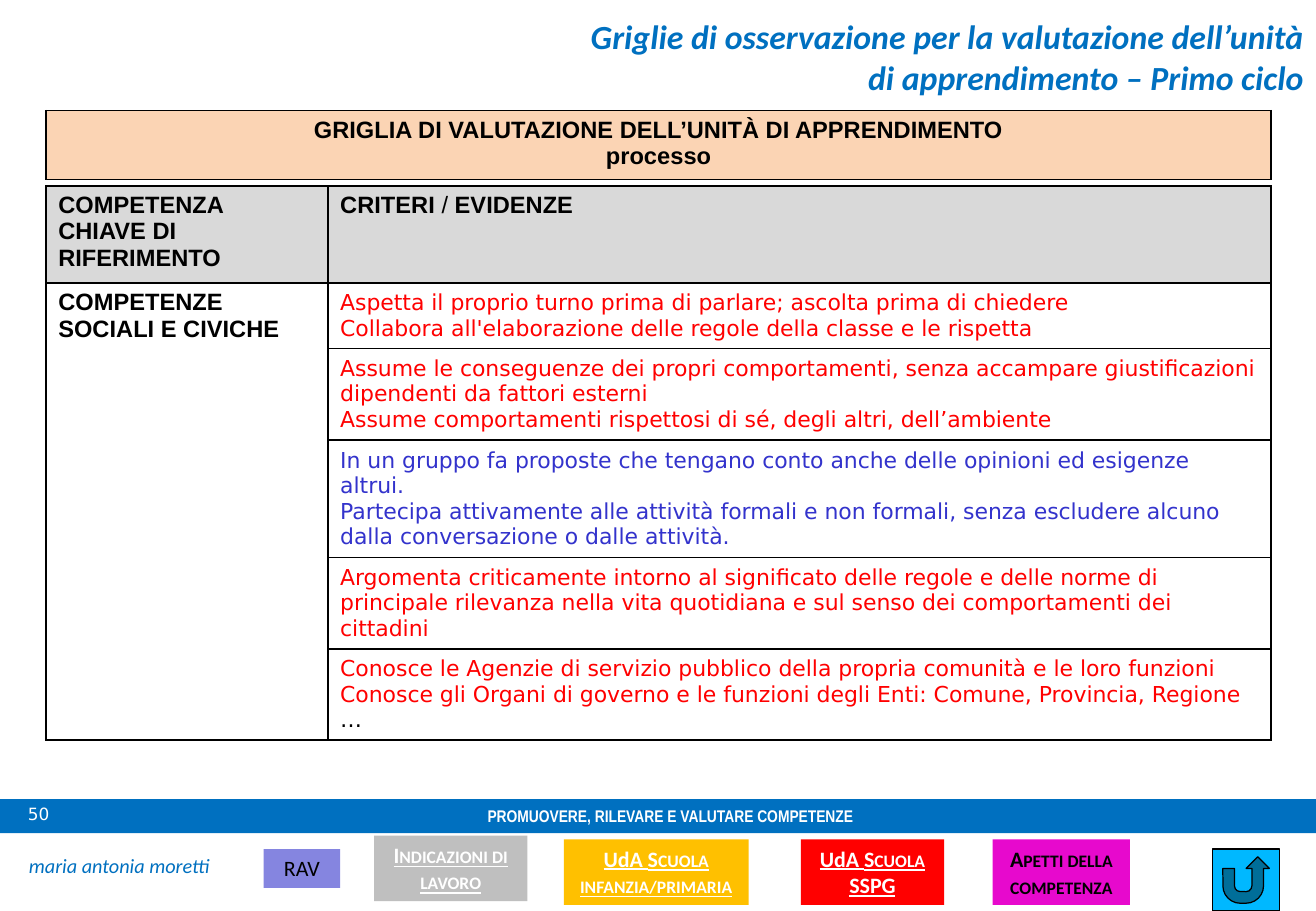
from pptx import Presentation
from pptx.dml.color import RGBColor
from pptx.enum.shapes import MSO_SHAPE
from pptx.enum.text import MSO_ANCHOR, MSO_AUTO_SIZE, PP_ALIGN
from pptx.oxml import parse_xml
from pptx.oxml.ns import nsdecls
from pptx.util import Inches, Pt

HEX = {
    "blue": "0070C0", "white": "FFFFFF", "black": "000000", "red": "FF0000",
    "navy": "3333CC", "amber": "FFC000", "silver": "BFBFBF", "pink": "E709CD",
    "lilac": "8585E0", "sky": "00B8FF", "grey": "D9D9D9", "peach": "FBD4B4",
}

HEAD = dict(size=14, font="Arial", bold=True)
ITEM = dict(size=13, font="DejaVu Sans", anchor=MSO_ANCHOR.MIDDLE)

# Height of each row, colour of its text, lines
CRITERIA = [
    (0.54, "red", [
        "Aspetta il proprio turno prima di parlare; ascolta prima di chiedere",
        "Collabora all'elaborazione delle regole della classe e le rispetta"]),
    (0.75, "red", [
        "Assume le conseguenze dei propri comportamenti, senza accampare "
        "giustificazioni dipendenti da fattori esterni",
        "Assume comportamenti rispettosi di sé, degli altri, dell’ambiente"]),
    (0.97, "navy", [
        "In un gruppo fa proposte che tengano conto anche delle opinioni ed "
        "esigenze altrui.",
        "Partecipa attivamente alle attività formali e non formali, senza "
        "escludere alcuno dalla conversazione o dalle attività."]),
    (0.75, "red", [
        "Argomenta criticamente intorno al significato delle regole e delle "
        "norme di principale rilevanza nella vita quotidiana e sul senso dei "
        "comportamenti dei cittadini"]),
    (0.75, "red", [
        "Conosce le Agenzie di servizio pubblico della propria comunità e le "
        "loro funzioni",
        "Conosce gli Organi di governo e le funzioni degli Enti: Comune, "
        "Provincia, Regione",
        [("…", dict(color="black"))]]),
]

SMALL = dict(caps=True)
LINK = dict(bold=True, under=True, color="white")
# Left, top offset, width, height, fill, text, format
BUTTONS = [
    (2.17, 0.11, 0.63, 0.32, "lilac", "RAV", {}),
    (3.08, 0, 1.26, 0.54, "silver", "Indicazioni di lavoro", LINK | SMALL),
    (4.64, 0.03, 1.52, 0.54, "amber",
     [("UdA ", {}), ("Scuola infanzia/primaria", SMALL)], LINK),
    (6.59, 0.03, 1.18, 0.54, "red",
     [("UdA ", {}), ("Scuola ", SMALL), ("SSPG", {})], LINK),
    (8.17, 0.03, 1.13, 0.54, "pink", "Apetti della competenza",
     dict(bold=True, caps=True, anchor=MSO_ANCHOR.MIDDLE)),
]


def rgb(name):
    return RGBColor.from_string(HEX[name])


def style(run, size=13, font="Calibri", color="black", bold=False,
          italic=False, under=False, caps=False):
    face = run.font
    face.size, face.name = Pt(size), font
    face.bold, face.italic, face.underline = bold, italic, under
    face.color.rgb = rgb(color)
    if caps:
        run._r.get_or_add_rPr().set("cap", "small")


def write(box, lines, align=PP_ALIGN.LEFT, anchor=MSO_ANCHOR.TOP, **look):
    """Fill a shape or cell; a line is a string or a list of (text, format)."""
    box.vertical_anchor = anchor
    frame = box if hasattr(box, "paragraphs") else box.text_frame
    for i, line in enumerate(lines):
        para = frame.paragraphs[0] if i == 0 else frame.add_paragraph()
        para.alignment = align
        for text, extra in [(line, {})] if isinstance(line, str) else line:
            run = para.add_run()
            run.text = text
            style(run, **(look | extra))


def label(slide, x, y, w, h, text, pad=(0.1, 0.05), wrap=True, **look):
    frame = slide.shapes.add_textbox(
        Inches(x), Inches(y), Inches(w), Inches(h)).text_frame
    frame.word_wrap = wrap
    frame.margin_left = frame.margin_right = Inches(pad[0])
    frame.margin_top = frame.margin_bottom = Inches(pad[1])
    write(frame, [text], **look)


def block(slide, kind, x, y, w, h, fill, line=None):
    shape = slide.shapes.add_shape(
        kind, Inches(x), Inches(y), Inches(w), Inches(h))
    shape.shadow.inherit = False
    shape.fill.solid()
    shape.fill.fore_color.rgb = rgb(fill)
    if line:
        shape.line.color.rgb = rgb(line)
        shape.line.width = Pt(0.75)
    else:
        shape.line.fill.background()
    return shape


def frame_cell(cell, fill=None):
    """Draw the four borders, then the fill."""
    props = cell._tc.get_or_add_tcPr()
    for side in "LRTB":
        props.append(parse_xml(
            f'<a:ln{side} {nsdecls("a")} w="12700"><a:solidFill>'
            f'<a:srgbClr val="{HEX["black"]}"/></a:solidFill></a:ln{side}>'))
    if fill:
        cell.fill.solid()
        cell.fill.fore_color.rgb = rgb(fill)
    else:
        cell.fill.background()


def grid(slide, x, y, cols, rows, fill):
    """Add a bordered table whose first row is filled."""
    table = slide.shapes.add_table(
        len(rows), len(cols), Inches(x), Inches(y),
        Inches(sum(cols)), Inches(sum(rows))).table
    table.first_row = table.horz_banding = False
    for col, width in zip(table.columns, cols):
        col.width = Inches(width)
    for i, (row, height) in enumerate(zip(table.rows, rows)):
        row.height = Inches(height)
        for cell in row.cells:
            frame_cell(cell, None if i else fill)
    return table


def heading(slide, x, y, w, h):
    title = slide.shapes.title
    title.left, title.top = Inches(x), Inches(y)
    title.width, title.height = Inches(w), Inches(h)
    title.text_frame.auto_size = MSO_AUTO_SIZE.NONE
    title.text_frame.word_wrap = True
    write(title.text_frame,
          ["Griglie di osservazione per la valutazione dell’unità "
           "di apprendimento – Primo ciclo"],
          align=PP_ALIGN.RIGHT, size=20, color="blue", bold=True, italic=True)


def rubric(slide, x, y, w):
    banner = grid(slide, x, y, [w], [0.57], "peach")
    write(banner.cell(0, 0),
          ["GRIGLIA DI VALUTAZIONE DELL’UNITÀ DI APPRENDIMENTO", "processo"],
          align=PP_ALIGN.CENTER, **HEAD)

    rows = [0.8] + [height for height, _, _ in CRITERIA]
    table = grid(slide, x, y + 0.62, [2.32, w - 2.32], rows, "grey")
    table.cell(1, 0).merge(table.cell(len(CRITERIA), 0))
    write(table.cell(0, 0), ["COMPETENZA CHIAVE DI RIFERIMENTO"], **HEAD)
    write(table.cell(0, 1),
          [[("CRITERI", {}), (" / ", dict(bold=False)), ("EVIDENZE", {})]],
          align=PP_ALIGN.JUSTIFY, **HEAD)
    write(table.cell(1, 0), ["COMPETENZE SOCIALI E CIVICHE"], **HEAD)
    for i, (_, color, lines) in enumerate(CRITERIA, 1):
        write(table.cell(i, 1), lines, color=color, **ITEM)


def footer(slide, y, w):
    block(slide, MSO_SHAPE.RECTANGLE, 0, y, w, 0.28, "blue")
    label(slide, 0.16, y, 0.38, 0.24, "50", pad=(0.07, 0.04), wrap=False,
          size=10, font="DejaVu Sans", color="white")
    label(slide, 0.77, y + 0.01, 9.49, 0.24,
          "PROMUOVERE, RILEVARE E VALUTARE COMPETENZE", pad=(0.07, 0.04),
          align=PP_ALIGN.CENTER, size=10, font="Arial Narrow",
          color="white", bold=True)
    label(slide, 0.14, y + 0.4, 1.73, 0.3, "maria antonia moretti",
          size=12, color="blue", italic=True)
    for left, drop, width, height, fill, text, look in BUTTONS:
        button = block(slide, MSO_SHAPE.RECTANGLE, left, y + 0.3 + drop,
                       width, height, fill)
        button.text_frame.word_wrap = True
        write(button.text_frame, [text], align=PP_ALIGN.CENTER, **look)
    block(slide, MSO_SHAPE.ACTION_BUTTON_RETURN, 9.98, y + 0.41, 0.55, 0.51,
          "sky", line="black")


def main():
    deck = Presentation()
    deck.slide_width, deck.slide_height = Inches(10.83), Inches(7.5)
    slide = deck.slides.add_slide(deck.slide_layouts[5])
    footer(slide, 6.58, 10.83)
    heading(slide, 4.63, 0.08, 6.2, 0.78)
    rubric(slide, 0.38, 0.91, 10.08)
    deck.save("out.pptx")


if __name__ == "__main__":
    main()
